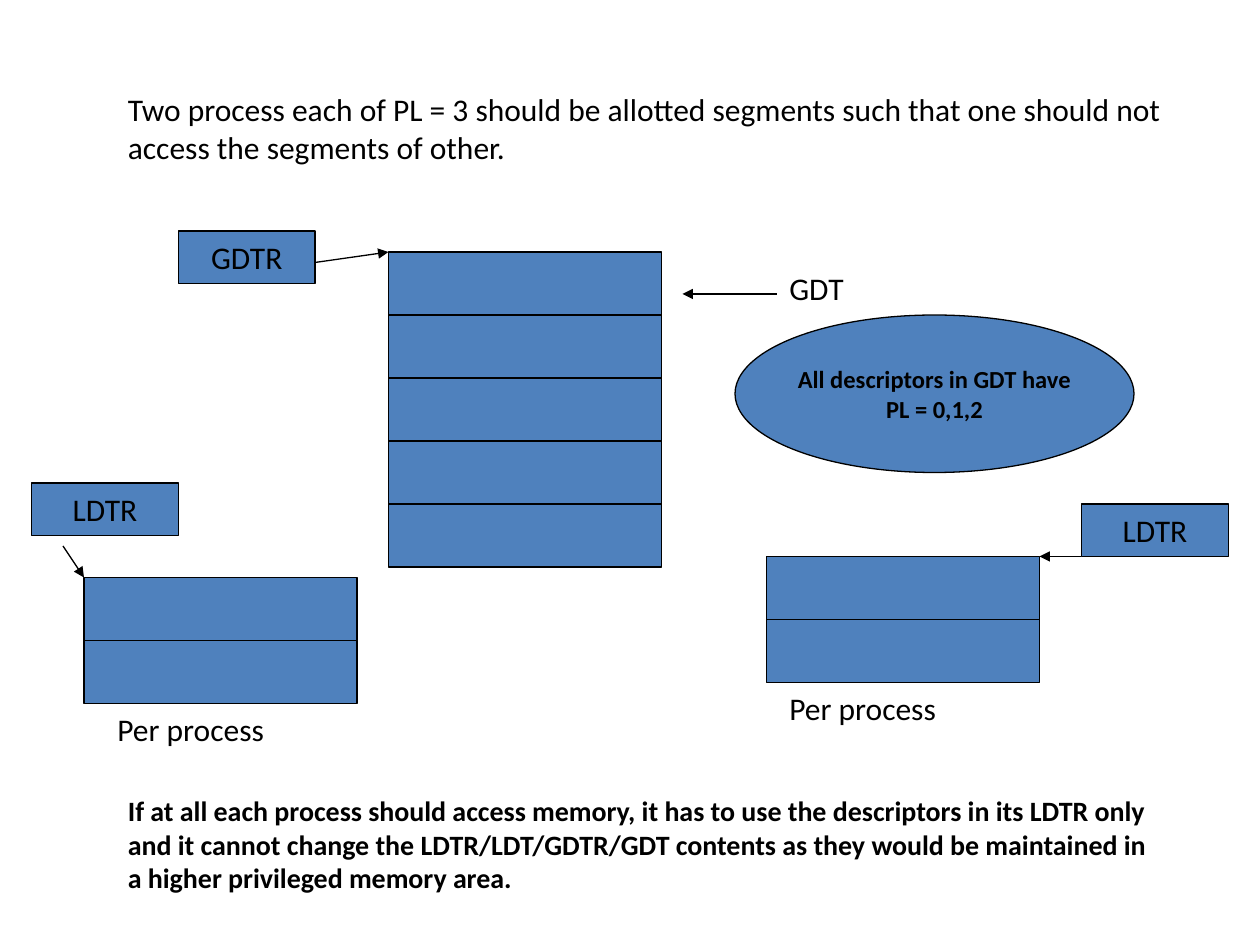
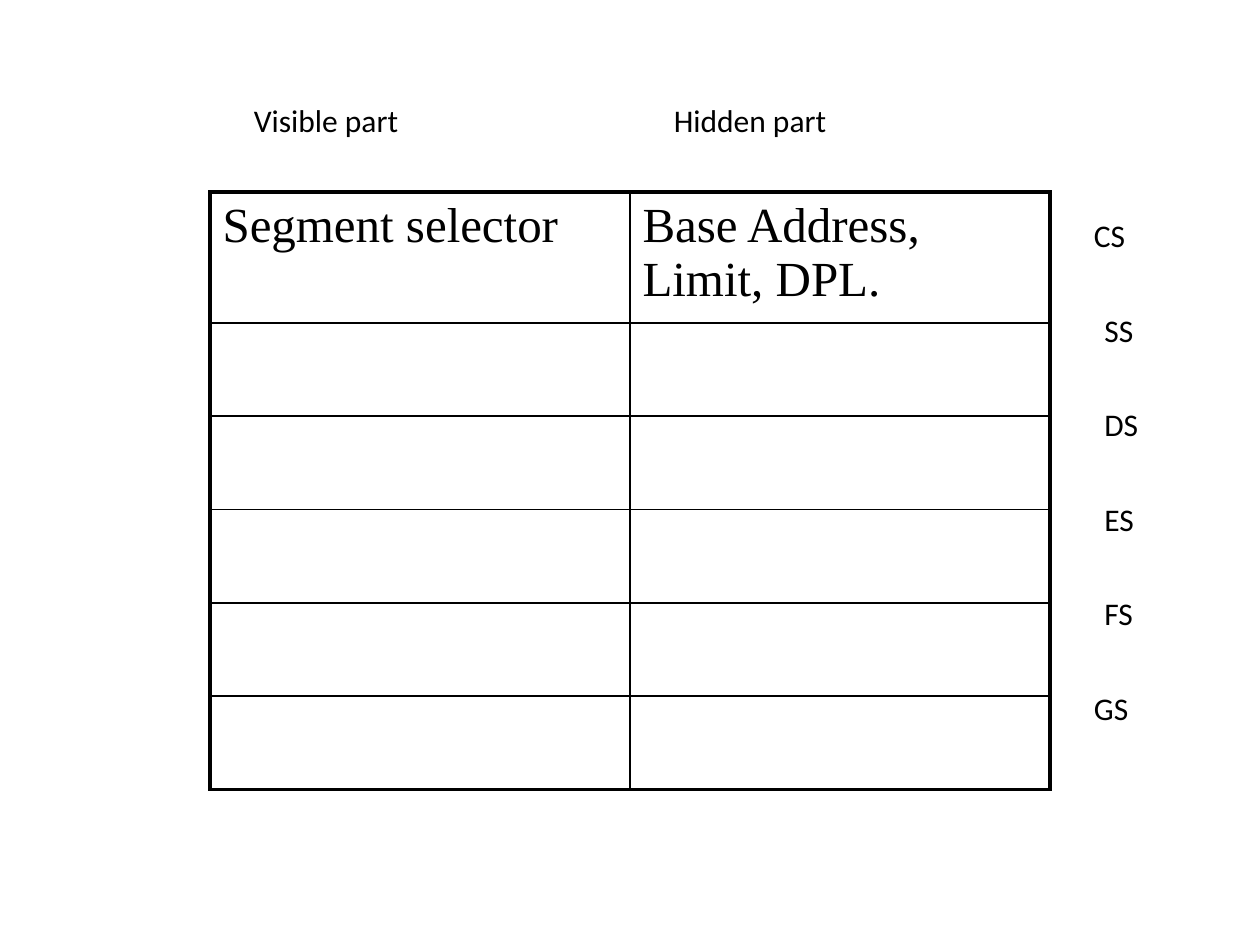
from pptx import Presentation
from pptx.dml.color import RGBColor
from pptx.enum.shapes import MSO_CONNECTOR as CONN, MSO_SHAPE as SHAPE
from pptx.enum.text import MSO_ANCHOR as ANCHOR, MSO_AUTO_SIZE as AUTO, PP_ALIGN as ALIGN
from pptx.oxml.ns import qn
from pptx.util import Inches, Pt
from lxml.etree import SubElement

BLUE = RGBColor(0x4F, 0x81, 0xBD)
BLACK = RGBColor(0, 0, 0)
BODY_FONT, TABLE_FONT = "Calibri", "Times New Roman"
THIN = Pt(0.75)
INNER, OUTER = Pt(1), Pt(2.25)

# The slide is a grid of 120 columns by 90 rows, 12 to the inch
COLS, ROWS = 120, 90
SEGMENT_W, SEGMENT_H = 26, 6
BLANK_LAYOUT = 6


def grid(*cells):
    return [Inches(n / 12) for n in cells]


def write(tf, text, align=ALIGN.LEFT, **fmt):
    """Fill a text frame, one paragraph a line, with the given font values."""
    style = {"name": BODY_FONT, "size": Pt(18), "bold": False} | fmt
    for i, line in enumerate(text.split("\n")):
        p = tf.add_paragraph() if i else tf.paragraphs[0]
        p.alignment = align
        r = p.add_run()
        r.text = line
        r.font.color.rgb = BLACK
        for key, value in style.items():
            setattr(r.font, key, value)


def add_label(s, text, x, y, w, h=6, **fmt):
    tf = s.shapes.add_textbox(*grid(x, y, w, h)).text_frame
    tf.word_wrap = True
    tf.auto_size = AUTO.SHAPE_TO_FIT_TEXT
    write(tf, text, **fmt)


def add_box(s, x, y, w, h, text="", kind=SHAPE.RECTANGLE, **fmt):
    sp = s.shapes.add_shape(kind, *grid(x, y, w, h))
    sp.shadow.inherit = False
    sp.fill.solid()
    sp.fill.fore_color.rgb = BLUE
    sp.line.color.rgb = BLACK
    sp.line.width = THIN
    if text:
        tf = sp.text_frame
        tf.word_wrap = False
        tf.vertical_anchor = ANCHOR.MIDDLE
        write(tf, text, ALIGN.CENTER, **fmt)


def add_segments(s, x, y, count):
    """Stack the descriptor entries of one table."""
    for i in range(count):
        add_box(s, x, y + i * SEGMENT_H, SEGMENT_W, SEGMENT_H)


def add_arrow(s, x1, y1, x2, y2):
    cx = s.shapes.add_connector(CONN.STRAIGHT, *grid(x1, y1, x2, y2))
    cx.line.color.rgb = BLACK
    cx.line.width = THIN
    SubElement(cx.line._get_or_add_ln(), qn("a:tailEnd"), type="triangle")
    SubElement(cx._element.spPr, qn("a:effectLst"))


def set_borders(cell, widths):
    tc_pr = cell._tc.get_or_add_tcPr()
    for side, width in widths.items():
        ln = SubElement(tc_pr, qn(f"a:ln{side}"), w=str(width))
        fill = SubElement(ln, qn("a:solidFill"))
        SubElement(fill, qn("a:srgbClr"), val=str(BLACK))


def add_register_table(s, x, y, w, headings, heights):
    """Draw a plain table with a heavy frame and thin inner lines."""
    n_rows, n_cols = len(heights), len(headings)
    table = s.shapes.add_table(n_rows, n_cols, *grid(x, y, w, sum(heights))).table
    table.first_row = table.horz_banding = False
    for row, height in zip(table.rows, grid(*heights)):
        row.height = height
    for i in range(n_rows):
        for j in range(n_cols):
            cell = table.cell(i, j)
            edges = {"L": j == 0, "R": j == n_cols - 1, "T": i == 0, "B": i == n_rows - 1}
            set_borders(cell, {k: OUTER if edge else INNER for k, edge in edges.items()})
            cell.fill.background()
    for cell, heading in zip(table.rows[0].cells, headings):
        write(cell.text_frame, heading, name=TABLE_FONT, size=Pt(28))


def descriptor_tables_slide(s):
    add_label(s, "Two process each of PL = 3 should be allotted segments such that "
              "one should not access the segments of other.", 11, 8, 103, 10.8)

    # Global table with its register
    add_segments(s, 37, 24, 5)
    add_box(s, 17, 22, 13, 5, "GDTR")
    add_arrow(s, 30, 25, 37, 24)
    add_label(s, "GDT", 74, 25, 20)
    add_arrow(s, 74, 28, 65, 28)
    add_box(s, 70, 30, 38, 15, "All descriptors in GDT have\nPL = 0,1,2",
            SHAPE.OVAL, size=Pt(14), bold=True)

    # Local tables: segments, register, caption and arrow start
    for table, register, caption, start in (
            ((8, 55), (3, 46), (10, 67), (6, 52)),
            ((73, 53), (103, 48), (74, 65), (103, 53))):
        add_segments(s, *table, 2)
        add_box(s, *register, 14, 5, "LDTR")
        add_label(s, "Per process", *caption, 24)
        # The arrow ends at the corner nearest its start
        x, y = table
        add_arrow(s, *start, x if start[0] < x else x + SEGMENT_W, y)

    add_label(s, "If at all each process should access memory, it has to use the "
              "descriptors in its LDTR only and it cannot change the "
              "LDTR/LDT/GDTR/GDT contents as they would be maintained in a higher "
              "privileged memory area.", 11, 75, 100, 10.8, size=Pt(16), bold=True)


def segment_registers_slide(s):
    for x, text in ((23, "Visible part"), (63, "Hidden part")):
        add_label(s, text, x, 9, 31)
    add_register_table(s, 20, 18.3, 80, ("Segment selector", "Base Address, Limit, DPL."),
                       [12.45] + [8.89] * 5)
    for i, register in enumerate(("CS", "SS", "DS", "ES", "FS", "GS")):
        add_label(s, register, 103 if register in ("CS", "GS") else 104, 20 + 9 * i, 9)


def main():
    prs = Presentation()
    prs.slide_width, prs.slide_height = grid(COLS, ROWS)
    for build in (descriptor_tables_slide, segment_registers_slide):
        build(prs.slides.add_slide(prs.slide_layouts[BLANK_LAYOUT]))
    prs.save("out.pptx")


if __name__ == "__main__":
    main()
